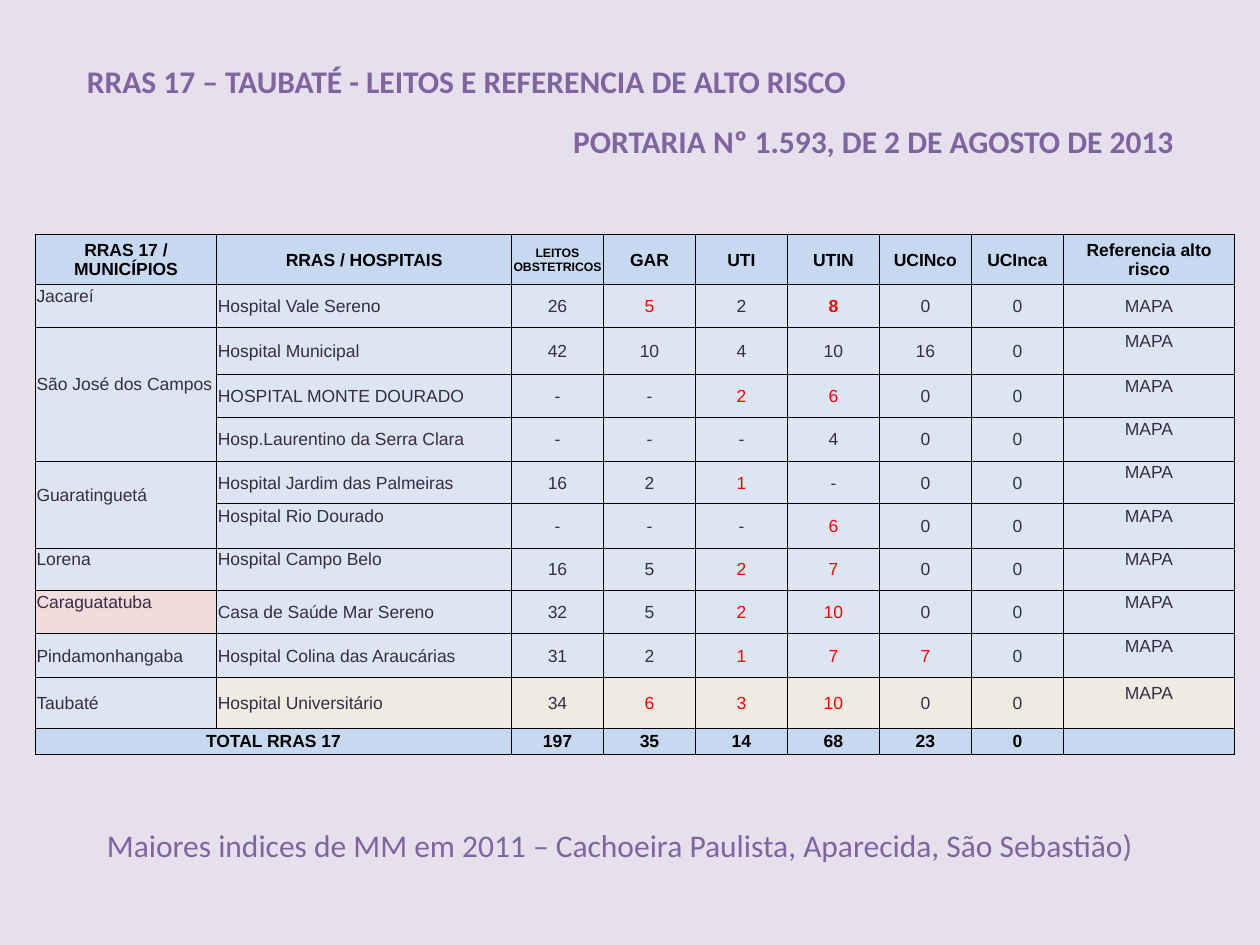
from lxml import etree
from pptx import Presentation
from pptx.dml.color import RGBColor
from pptx.enum.text import MSO_ANCHOR, MSO_AUTO_SIZE, PP_ALIGN
from pptx.oxml import parse_xml
from pptx.oxml.ns import nsdecls, qn
from pptx.util import Inches, Pt

PURPLE, DARK, RED, BLACK = "8064A2", "372C47", "FF0000", "000000"
HEADER_FILL, BODY_FILL, PINK_FILL, BEIGE_FILL = "C6D9F1", "DCE6F2", "F2DCDB", "EEECE1"

COLUMN_WIDTHS = [1.44, 2.34] + [0.73] * 6 + [1.36]
ROW_HEIGHTS = [0.4, 0.34, 0.37, 0.34, 0.35, 0.34, 0.35, 0.34, 0.34, 0.35, 0.4, 0.21]
ROWS = [
    ["RRAS 17 / MUNICÍPIOS", "RRAS / HOSPITAIS", "LEITOS\nOBSTETRICOS", "GAR", "UTI",
     "UTIN", "UCINco", "UCInca", "Referencia alto risco"],
    ["Jacareí", "Hospital Vale Sereno", "26", "5", "2", "8", "0", "0", "MAPA"],
    ["São José dos Campos", "Hospital Municipal", "42", "10", "4", "10", "16", "0", "MAPA"],
    ["", "HOSPITAL MONTE DOURADO", "-", "-", "2", "6", "0", "0", "MAPA"],
    ["", "Hosp.Laurentino da Serra Clara", "-", "-", "-", "4", "0", "0", "MAPA"],
    ["Guaratinguetá", "Hospital Jardim das Palmeiras", "16", "2", "1", "-", "0", "0", "MAPA"],
    ["", "Hospital Rio Dourado", "-", "-", "-", "6", "0", "0", "MAPA"],
    ["Lorena", "Hospital Campo Belo", "16", "5", "2", "7", "0", "0", "MAPA"],
    ["Caraguatatuba", "Casa de Saúde Mar Sereno", "32", "5", "2", "10", "0", "0", "MAPA"],
    ["Pindamonhangaba", "Hospital Colina das Araucárias", "31", "2", "1", "7", "7", "0", "MAPA"],
    ["Taubaté", "Hospital Universitário", "34", "6", "3", "10", "0", "0", "MAPA"],
    ["TOTAL RRAS 17", "", "197", "35", "14", "68", "23", "0", ""],
]
LAST_ROW, LAST_COLUMN = len(ROWS) - 1, len(COLUMN_WIDTHS) - 1
# Columns with red figures, by row
RED_COLUMNS = {1: (3, 5), 3: (4, 5), 5: (4,), 6: (5,), 7: (4, 5), 8: (4, 5),
               9: (4, 5, 6), 10: (3, 4, 5)}
# Cells whose text sits one half line above the middle
RAISED_CELLS = {(1, 0), (2, 0), (5, 0), (6, 1), (7, 0), (7, 1), (8, 0)}
RAISED_CELLS |= {(row, LAST_COLUMN) for row in range(2, LAST_ROW)}


def color(value):
    return RGBColor.from_string(value)


def format_text(text_frame, font_name, size, font_color, bold=False, align=PP_ALIGN.LEFT):
    for paragraph in text_frame.paragraphs:
        paragraph.alignment = align
        for run in paragraph.runs:
            run.font.name = font_name
            run.font.size = Pt(size)
            run.font.bold = bold
            run.font.color.rgb = color(font_color)


def place_line(shape, box, text, bold):
    """Fill a title or text box with one purple line."""
    shape.left, shape.top, shape.width, shape.height = map(Inches, box)
    text_frame = shape.text_frame
    text_frame.text = text
    text_frame.word_wrap = False
    text_frame.auto_size = MSO_AUTO_SIZE.SHAPE_TO_FIT_TEXT
    text_frame.vertical_anchor = MSO_ANCHOR.TOP
    format_text(text_frame, "Calibri", 18, PURPLE, bold)


def add_line(slide, box, text, bold=False):
    place_line(slide.shapes.add_textbox(*map(Inches, box)), box, text, bold)


def cell_fill(row, column):
    if row in (0, LAST_ROW):
        return HEADER_FILL
    if (row, column) == (8, 0):
        return PINK_FILL
    return BEIGE_FILL if row == 10 and column > 0 else BODY_FILL


def add_borders(cell):
    properties = cell._tc.get_or_add_tcPr()
    for side in ("lnL", "lnR", "lnT", "lnB"):
        properties.append(parse_xml(
            f'<a:{side} {nsdecls("a")} w="{Pt(0.5)}"><a:solidFill>'
            f'<a:srgbClr val="{BLACK}"/></a:solidFill></a:{side}>'))


def format_cell(cell, row, column):
    cell.text = ROWS[row][column]
    cell.vertical_anchor = MSO_ANCHOR.MIDDLE
    cell.margin_left = cell.margin_right = cell.margin_top = Inches(0.01)
    cell.margin_bottom = Inches(0.16 if (row, column) in RAISED_CELLS else 0)
    add_borders(cell)
    cell.fill.solid()
    cell.fill.fore_color.rgb = color(cell_fill(row, column))

    emphasized = row in (0, LAST_ROW)
    font_color = BLACK if emphasized else DARK
    if column in RED_COLUMNS.get(row, ()):
        font_color = RED
    size = 7 if (row, column) == (0, 2) else 10
    align = PP_ALIGN.CENTER if emphasized or column > 1 else PP_ALIGN.LEFT
    format_text(cell.text_frame, "Arial", size, font_color,
                emphasized or (row, column) == (1, 5), align)
    if not ROWS[row][column]:  # keeps empty cells from stretching the row
        paragraph = cell.text_frame.paragraphs[0]
        etree.SubElement(paragraph._p, qn("a:endParaRPr"), sz="1000")


def add_beds_table(slide, box):
    frame = slide.shapes.add_table(len(ROWS), len(COLUMN_WIDTHS), *map(Inches, box))
    table = frame.table
    table.first_row = table.horz_banding = False
    for column, width in zip(table.columns, COLUMN_WIDTHS):
        column.width = Inches(width)
    for row, height in zip(table.rows, ROW_HEIGHTS):
        row.height = Inches(height)
    for row in range(len(ROWS)):
        for column in range(len(COLUMN_WIDTHS)):
            format_cell(table.cell(row, column), row, column)
    # Municipalities with several hospitals, and the total label
    for first, last in (((2, 0), (4, 0)), ((5, 0), (6, 0)), ((LAST_ROW, 0), (LAST_ROW, 1))):
        table.cell(*first).merge(table.cell(*last))


def main():
    presentation = Presentation()
    presentation.slide_width, presentation.slide_height = Inches(10), Inches(7.5)
    slide = presentation.slides.add_slide(presentation.slide_layouts[5])
    slide.background.fill.solid()
    slide.background.fill.fore_color.rgb = color("E5E0EC")

    # Heading
    place_line(slide.shapes.title, (0.59, 0.44, 6.29, 0.4),
               "RRAS 17 – TAUBATÉ - LEITOS E REFERENCIA DE ALTO RISCO", True)
    add_line(slide, (4.45, 0.92, 5.02, 0.4), "PORTARIA Nº 1.593, DE 2 DE AGOSTO DE 2013", True)
    # Beds by hospital
    add_beds_table(slide, (0.28, 1.86, sum(COLUMN_WIDTHS), sum(ROW_HEIGHTS)))
    # Closing remark
    add_line(slide, (0.75, 6.51, 8.37, 0.4),
             "Maiores indices de MM em 2011 – Cachoeira Paulista, Aparecida, São Sebastião)")

    presentation.save("out.pptx")


if __name__ == "__main__":
    main()
